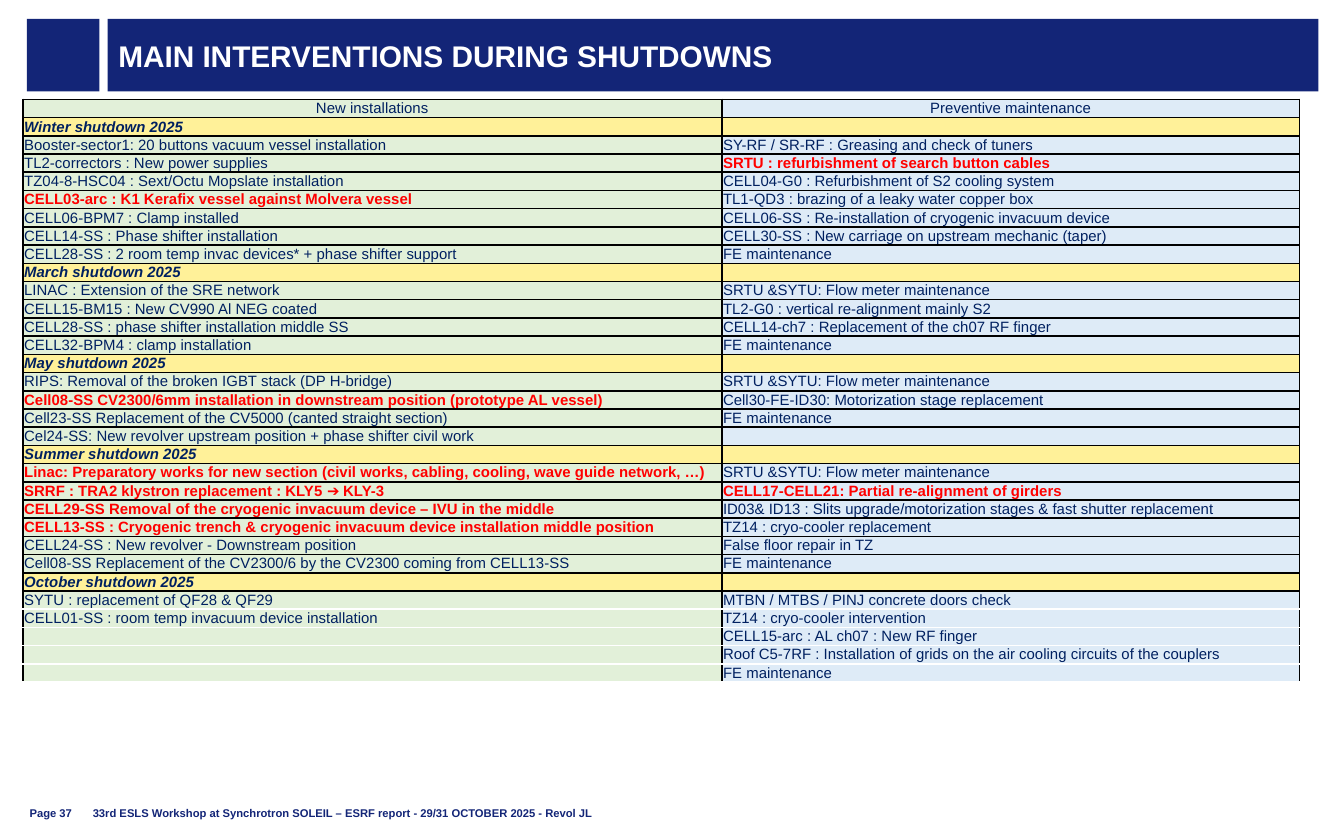
from itertools import zip_longest

from lxml.etree import SubElement
from pptx import Presentation
from pptx.dml.color import RGBColor
from pptx.enum.shapes import MSO_SHAPE as Shape
from pptx.enum.text import MSO_ANCHOR as Anchor, PP_ALIGN as Align
from pptx.oxml.ns import qn
from pptx.util import Inches, Pt

COLOURS = {"navy": "132577", "text": "002060", "alert": "FF0000", "white": "FFFFFF",
           "black": "000000", "green": "E2F0D9", "blue": "DEEBF7", "yellow": "FFF199"}
HEADINGS = ["New installations", "Preventive maintenance"]
ALERT = "!"
SHUTDOWNS = {
    "Winter shutdown 2025": (
        ["Booster-sector1: 20 buttons vacuum vessel installation",
         "TL2-correctors : New power supplies",
         "TZ04-8-HSC04 : Sext/Octu Mopslate installation",
         "!CELL03-arc : K1 Kerafix vessel against Molvera vessel",
         "CELL06-BPM7 : Clamp installed",
         "CELL14-SS : Phase shifter installation",
         "CELL28-SS : 2 room temp invac devices* + phase shifter support"],
        ["SY-RF / SR-RF : Greasing and check of tuners",
         "!SRTU : refurbishment of search button cables",
         "CELL04-G0 : Refurbishment of S2 cooling system",
         "TL1-QD3 : brazing of a leaky water copper box",
         "CELL06-SS : Re-installation of cryogenic invacuum device",
         "CELL30-SS : New carriage on upstream mechanic (taper)",
         "FE maintenance"]),
    "March shutdown 2025": (
        ["LINAC : Extension of the SRE network",
         "CELL15-BM15 : New CV990 Al NEG coated",
         "CELL28-SS : phase shifter installation middle SS",
         "CELL32-BPM4 : clamp installation"],
        ["SRTU &SYTU: Flow meter maintenance",
         "TL2-G0 : vertical re-alignment mainly S2",
         "CELL14-ch7 : Replacement of the ch07 RF finger",
         "FE maintenance"]),
    "May shutdown 2025": (
        ["RIPS: Removal of the broken IGBT stack (DP H-bridge)",
         "!Cell08-SS CV2300/6mm installation in downstream position (prototype AL vessel)",
         "Cell23-SS Replacement of the CV5000 (canted straight section)",
         "Cel24-SS: New revolver upstream position + phase shifter civil work"],
        ["SRTU &SYTU: Flow meter maintenance",
         "Cell30-FE-ID30: Motorization stage replacement",
         "FE maintenance"]),
    "Summer shutdown 2025": (
        ["!Linac: Preparatory works for new section "
         "(civil works, cabling, cooling, wave guide network, …)",
         "!SRRF : TRA2 klystron replacement : KLY5 ➔ KLY-3",
         "!CELL29-SS Removal of the cryogenic invacuum device – IVU in the middle",
         "!CELL13-SS : Cryogenic trench & cryogenic invacuum device installation middle position",
         "CELL24-SS : New revolver - Downstream position",
         "Cell08-SS Replacement of the CV2300/6 by the CV2300 coming from CELL13-SS"],
        ["SRTU &SYTU: Flow meter maintenance",
         "!CELL17-CELL21: Partial re-alignment of girders",
         "ID03& ID13 : Slits upgrade/motorization stages & fast shutter replacement",
         "TZ14 : cryo-cooler replacement",
         "False floor repair in TZ",
         "FE maintenance"]),
    "October shutdown 2025": (
        ["SYTU : replacement of QF28 & QF29",
         "CELL01-SS : room temp invacuum device installation"],
        ["MTBN / MTBS / PINJ concrete doors check",
         "TZ14 : cryo-cooler intervention",
         "CELL15-arc : AL ch07 : New RF finger",
         "Roof C5-7RF : Installation of grids on the air cooling circuits of the couplers",
         "FE maintenance"]),
}


class Page:
    """Holds the style and the current slide, measured on a grid of 100 columns by 100 rows."""

    font = "Arial"
    table_size = 8

    def __init__(self, deck):
        self.slide = deck.slides.add_slide(deck.slide_layouts[6])
        self.column, self.row = deck.slide_width / 100, deck.slide_height / 100

    def place(self, left, top, width, height):
        return [int(length * unit) for length, unit in
                zip((left, top, width, height), (self.column, self.row) * 2)]

    def label(self, para, text, size, colour, bold=False, italic=False, align=Align.LEFT):
        para.text, para.alignment = text, align
        font = para.font
        font.name, font.size, font.bold, font.italic = self.font, Pt(size), bold, italic
        font.color.rgb = RGBColor.from_string(COLOURS[colour])

    def frame(self, box, text, size, colour, anchor, inset=0):
        body = box.text_frame
        body.word_wrap, body.vertical_anchor = True, anchor
        body.margin_left = body.margin_right = Inches(inset)
        body.margin_top = body.margin_bottom = 0
        self.label(body.paragraphs[0], text, size, colour, bold=True)

    def block(self, *area):
        box = self.slide.shapes.add_shape(Shape.RECTANGLE, *self.place(*area))
        box.shadow.inherit = False
        box.fill.solid()
        box.fill.fore_color.rgb = RGBColor.from_string(COLOURS["navy"])
        box.line.fill.background()
        return box

    def title(self, text, *area):
        self.frame(self.block(*area), text, 16, "white", Anchor.MIDDLE, 0.08)

    def footer(self, text, *area):
        box = self.slide.shapes.add_textbox(*self.place(*area))
        self.frame(box, text, 6, "navy", Anchor.BOTTOM)

    def borders(self, cell, top, bottom):
        properties = cell._tc.get_or_add_tcPr()
        for side, colour in zip("LRTB", ("black", "black", top, bottom)):
            line = SubElement(properties, qn(f"a:ln{side}"), w=str(Pt(1)))
            SubElement(SubElement(line, qn("a:solidFill")), qn("a:srgbClr"), val=COLOURS[colour])

    def cell(self, cell, text, fill, top="black", bottom="black", **style):
        cell.margin_left = cell.margin_right = Inches(0.01)
        cell.margin_top = cell.margin_bottom = 0
        cell.vertical_anchor = Anchor.MIDDLE
        self.borders(cell, top, bottom)
        cell.fill.solid()
        cell.fill.fore_color.rgb = RGBColor.from_string(COLOURS[fill])
        alert = text.startswith(ALERT)
        look = {"colour": "alert" if alert else "text", "bold": alert, **style}
        para = cell.text_frame.paragraphs[0]
        self.label(para, text.removeprefix(ALERT), self.table_size, **look)
        if not text:
            SubElement(para._p, qn("a:endParaRPr"), sz=str(self.table_size * 100))

    def table(self, rows, widths, *area):
        left, top, width, height = self.place(*area)
        table = self.slide.shapes.add_table(len(rows), len(widths), left, top, width, height).table
        table.first_row = table.horz_banding = False
        for column, share in zip(table.columns, widths):
            column.width = int(share * self.column)
        for row, (texts, fills, style) in zip(table.rows, rows):
            row.height = height // len(rows)
            for cell, text, fill in zip(row.cells, texts, fills):
                self.cell(cell, text, fill, **style)


def intervention_rows():
    fills = ("green", "blue")
    rows = [(HEADINGS, fills, {"align": Align.CENTER})]
    last = list(SHUTDOWNS)[-1]
    for name, lists in SHUTDOWNS.items():
        rows.append(((name, ""), ("yellow", "yellow"), {"bold": True, "italic": True}))
        for index, texts in enumerate(zip_longest(*lists, fillvalue="")):
            style = {}
            if name == last:
                style = {"top": "white" if index else "black", "bottom": "white"}
            rows.append((texts, fills, style))
    return rows


def main():
    deck = Presentation()
    deck.slide_width, deck.slide_height = Inches(10), Inches(6.25)
    page = Page(deck)
    page.block(2, 2.24, 5.4, 8.64)
    page.title("MAIN INTERVENTIONS DURING SHUTDOWNS", 8, 2.24, 90.1, 8.64)
    page.table(intervention_rows(), (52, 43), 1.7, 11.84, 95, 69.52)
    page.footer("Page 37", 2.2, 94.56, 4.5, 3.04)
    page.footer("33rd ESLS Workshop at Synchrotron SOLEIL – ESRF report - "
                "29/31 OCTOBER 2025 - Revol JL", 6.9, 94.56, 66.9, 3.04)
    deck.save("out.pptx")


if __name__ == "__main__":
    main()
